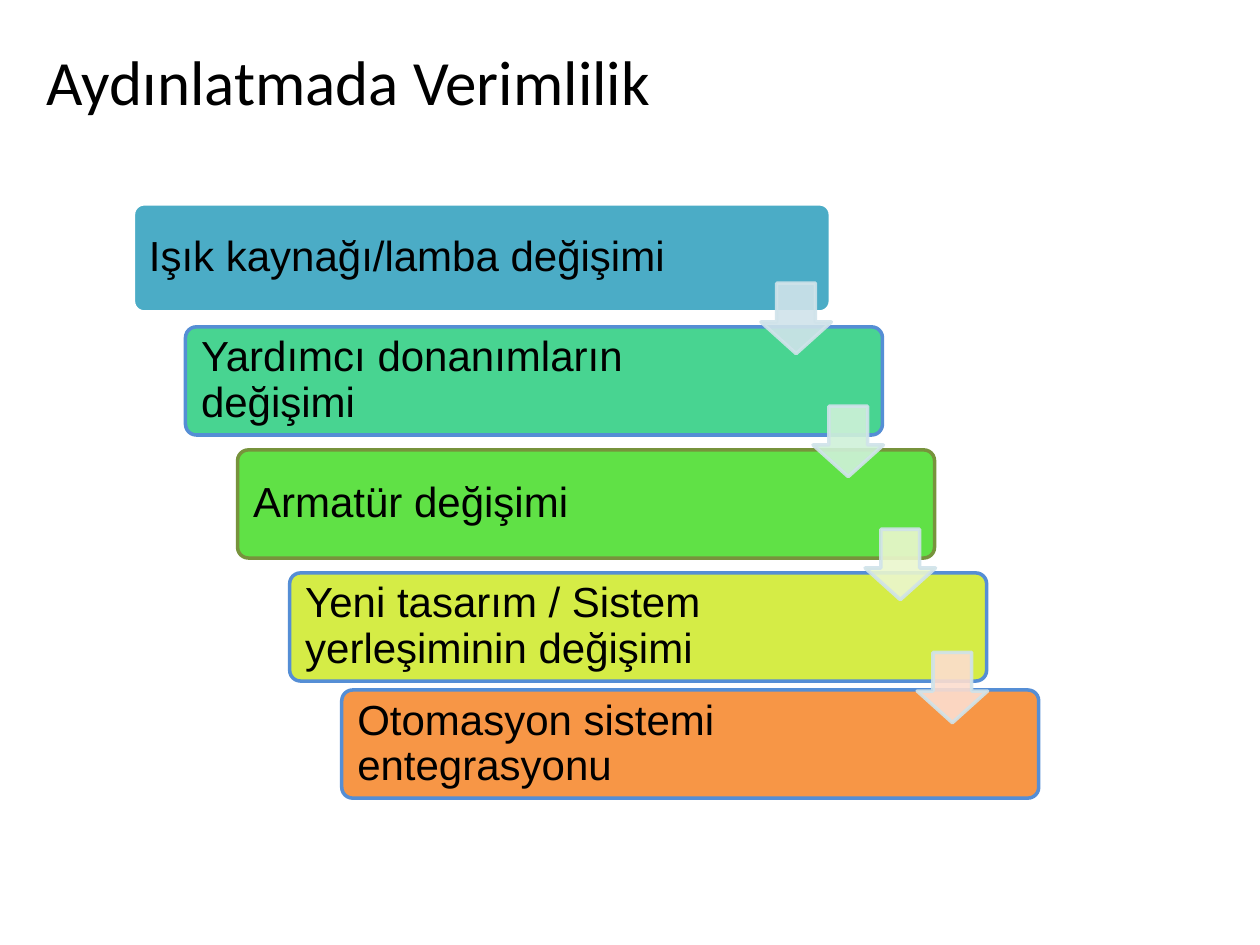
import pptx
import pptx.util
import pptx.dml.color
import pptx.enum.shapes
import pptx.enum.text
import pptx.oxml.ns
import lxml.etree

Cm, Pt = pptx.util.Cm, pptx.util.Pt
RGB = pptx.dml.color.RGBColor.from_string
SHAPES = pptx.enum.shapes.MSO_SHAPE
qn = pptx.oxml.ns.qn

# Content: measure, bar fill, bar outline, fill of the arrow to the next bar
HEADING = "Aydınlatmada Verimlilik"
MEASURES = [
    ("Işık kaynağı/lamba değişimi", "4BACC6", "FFFFFF", "D0E3EA"),
    ("Yardımcı donanımların değişimi", "48D491", "558ED5", "CFF1D9"),
    ("Armatür değişimi", "60E146", "77933C", "EBF7CE"),
    ("Yeni tasarım / Sistem yerleşiminin değişimi", "D5EC46", "558ED5", "FCDDCF"),
    ("Otomasyon sistemi entegrasyonu", "F79646", "558ED5", None),
]

THEME = {
    "ink": "000000",
    "arrow_line": "D0E3EA",
    "line_width": 2,
    "arrow_opacity": 90,
    "heading": {"name": "Calibri", "size": Pt(36)},
    "measure": {"name": "Arial", "size": Pt(24)},
}

# Staircase geometry, in cm
LEFT, TOP = 2.69, 4.11
STEP_X, STEP_Y = 1.05, 2.48
BAR_W, BAR_H = 14.05, 2.18
LAST_LIFT = 0.12
ARROW_X, ARROW_Y, ARROW_SIZE = 12.65, 1.6, 1.42
BAR_FRAME = {
    "word_wrap": True,
    "vertical_anchor": pptx.enum.text.MSO_ANCHOR.MIDDLE,
    "margin_left": Cm(0.25),
    "margin_top": Cm(0.25),
    "margin_right": Cm(2.72),
    "margin_bottom": Cm(0.25),
}
HEADING_FRAME = {
    "word_wrap": True,
    "vertical_anchor": pptx.enum.text.MSO_ANCHOR.MIDDLE,
}


def apply(target, values):
    for name, value in values.items():
        setattr(target, name, value)


def write(frame, words, frame_format, font_format):
    apply(frame, frame_format)
    paragraph = frame.paragraphs[0]
    paragraph.alignment = pptx.enum.text.PP_ALIGN.LEFT
    run = paragraph.add_run()
    run.text = words
    apply(run.font, font_format)
    run.font.color.rgb = RGB(THEME["ink"])
    return paragraph


def draw(shapes, preset, box, adjustments, fill, line):
    drawn = shapes.add_shape(preset, *(Cm(length) for length in box))
    for index, value in enumerate(adjustments):
        drawn.adjustments[index] = value
    drawn.shadow.inherit = False
    drawn.fill.solid()
    drawn.fill.fore_color.rgb = RGB(fill)
    drawn.line.color.rgb = RGB(line)
    drawn.line.width = Pt(THEME["line_width"])
    return drawn


def set_opacity(drawn, percent):
    for color in drawn.element.spPr.iter(qn("a:srgbClr")):
        alpha = lxml.etree.SubElement(color, qn("a:alpha"))
        alpha.set("val", str(percent * 1000))


deck = pptx.Presentation()
deck.slide_width, deck.slide_height = Cm(25.4), Cm(19.05)
slide = deck.slides.add_slide(deck.slide_layouts[6])

# Staircase of bars
staircase = slide.shapes.add_group_shape().shapes
corners = [(LEFT + i * STEP_X, TOP + i * STEP_Y) for i in range(len(MEASURES))]
corners[-1] = (corners[-1][0], corners[-1][1] - LAST_LIFT)
for (x, y), (measure, fill, line, _) in zip(corners, MEASURES):
    bar = draw(staircase, SHAPES.ROUNDED_RECTANGLE, (x, y, BAR_W, BAR_H),
               [0.1], fill, line)
    write(bar.text_frame, measure, BAR_FRAME, THEME["measure"]).line_spacing = 0.9

# Arrows leading down to the next bar
for (x, y), (*_, arrow_fill) in zip(corners[:-1], MEASURES):
    arrow = draw(staircase, SHAPES.DOWN_ARROW,
                 (x + ARROW_X, y + ARROW_Y, ARROW_SIZE, ARROW_SIZE),
                 [0.55, 0.45], arrow_fill, THEME["arrow_line"])
    set_opacity(arrow, THEME["arrow_opacity"])

# Heading
heading = slide.shapes.add_textbox(Cm(0.69), Cm(0.91), Cm(21.59), Cm(1.42))
write(heading.text_frame, HEADING, HEADING_FRAME, THEME["heading"])

deck.save("out.pptx")
